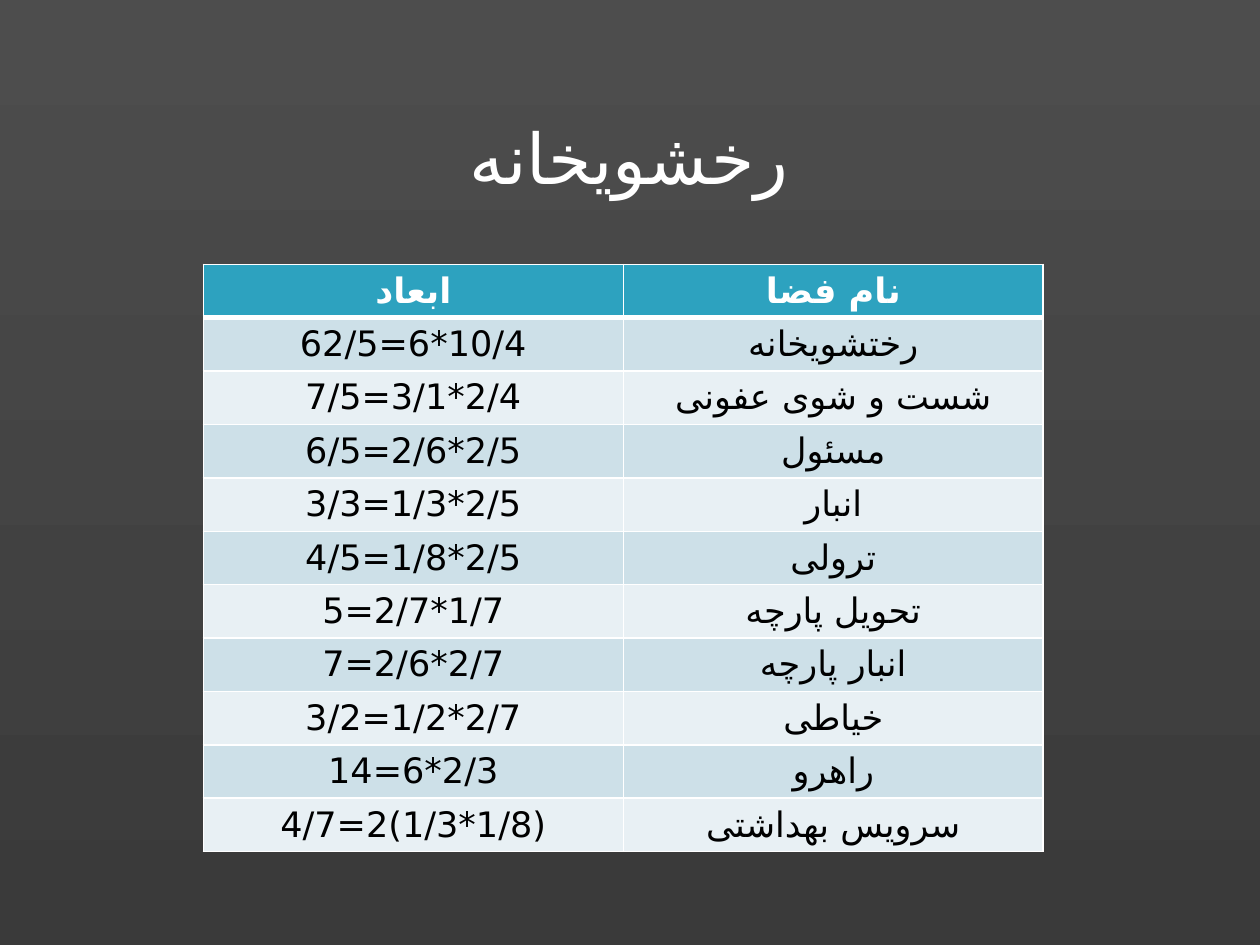
from lxml import etree
from pptx import Presentation
from pptx import util as u
from pptx.dml import color
from pptx.enum import text
from pptx.oxml import ns

FONT = "DejaVu Sans"
WHITE, BLACK = "FFFFFF", "000000"
HEADER_FILL = "2DA2BF"
BAND_FILLS = ("CDE0E8", "E8F0F4")
ROWS = [
    ("ابعاد", "نام فضا"),
    ("62/5=6*10/4", "رختشویخانه"),
    ("7/5=3/1*2/4", "شست و شوی عفونی"),
    ("6/5=2/6*2/5", "مسئول"),
    ("3/3=1/3*2/5", "انبار"),
    ("4/5=1/8*2/5", "ترولی"),
    ("5=2/7*1/7", "تحویل پارچه"),
    ("7=2/6*2/7", "انبار پارچه"),
    ("3/2=1/2*2/7", "خیاطی"),
    ("14=6*2/3", "راهرو"),
    ("4/7=2(1/3*1/8)", "سرویس بهداشتی"),
]


def rgb(value):
    """Turn a hex string into a colour."""
    return color.RGBColor.from_string(value)


def set_background(slide, top, bottom):
    """Fill the slide with a vertical gradient."""
    fill = slide.background.fill
    fill.gradient()
    fill.gradient_angle = 270
    for stop, value in zip(fill.gradient_stops, (top, bottom)):
        stop.color.rgb = rgb(value)


def write_text(frame, content, size, value, bold=False):
    """Write one centred, formatted paragraph."""
    paragraph = frame.paragraphs[0]
    paragraph.alignment = text.PP_ALIGN.CENTER
    run = paragraph.add_run()
    run.text = content
    formats = {"name": FONT, "size": u.Pt(size), "bold": bold}
    for name, setting in formats.items():
        setattr(run.font, name, setting)
    run.font.color.rgb = rgb(value)
    script_font = etree.SubElement(run.font._element, ns.qn("a:cs"))
    script_font.set("typeface", FONT)


def add_title(slide, content):
    """Place and fill the title placeholder."""
    title = slide.shapes.title
    box = {"left": 2.79, "top": 1.88, "width": 19.79, "height": 2.57}
    for name, length in box.items():
        setattr(title, name, u.Cm(length))
    title.text_frame.vertical_anchor = text.MSO_ANCHOR.MIDDLE
    write_text(title.text_frame, content, 40, WHITE)


def set_borders(cell, widths):
    """Draw white borders, with widths in points by side."""
    properties = cell._tc.get_or_add_tcPr()
    for side, width in widths.items():
        line = etree.SubElement(properties, ns.qn(f"a:ln{side}"), w=str(u.Pt(width)))
        fill = etree.SubElement(line, ns.qn("a:solidFill"))
        etree.SubElement(fill, ns.qn("a:srgbClr"), val=WHITE)


def format_cell(cell, content, row):
    """Fill one cell in the style of its row."""
    header = row == 0
    set_borders(cell, {"L": 1, "R": 1, "T": 3 if row == 1 else 1, "B": 3 if header else 1})
    cell.fill.solid()
    cell.fill.fore_color.rgb = rgb(HEADER_FILL if header else BAND_FILLS[(row - 1) % 2])
    write_text(cell.text_frame, content, 20, WHITE if header else BLACK, header)


def add_space_table(slide, rows):
    """Add the table of spaces and their dimensions."""
    row_height = u.Cm(1.03)
    frame = slide.shapes.add_table(
        len(rows), len(rows[0]), u.Cm(4.1), u.Cm(5.33), u.Cm(16.93), row_height * len(rows)
    )
    for index, values in enumerate(rows):
        frame.table.rows[index].height = row_height
        for column, content in enumerate(values):
            format_cell(frame.table.cell(index, column), content, index)


def main():
    """Build and save the presentation."""
    presentation = Presentation()
    presentation.slide_width, presentation.slide_height = u.Cm(25.4), u.Cm(19.05)
    slide = presentation.slides.add_slide(presentation.slide_layouts[5])
    set_background(slide, "4D4D4D", "3A3A3A")
    add_title(slide, "رخشویخانه")
    add_space_table(slide, ROWS)
    presentation.save("out.pptx")


if __name__ == "__main__":
    main()
